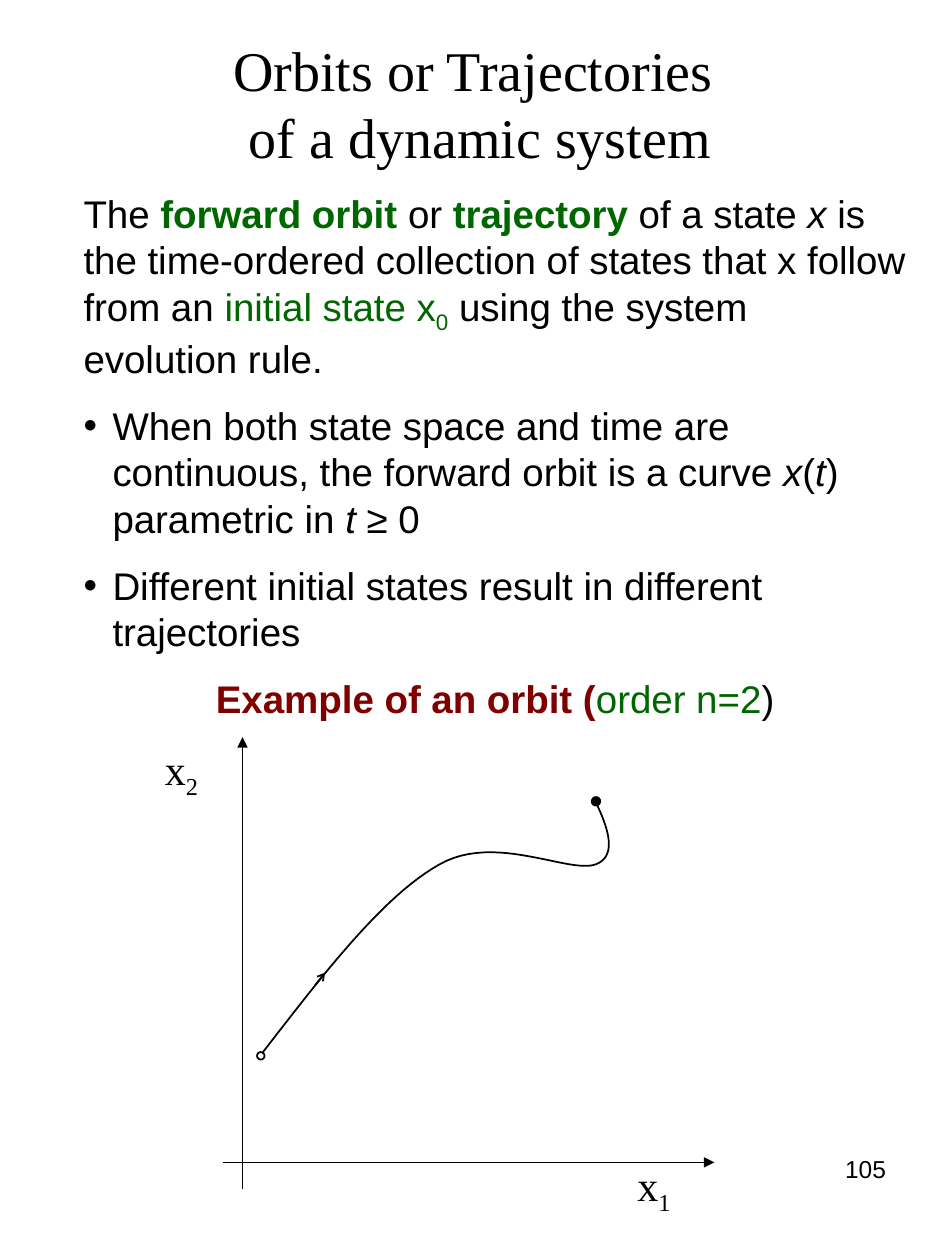
from lxml import etree
from pptx import Presentation
from pptx.dml.color import RGBColor
from pptx.enum.shapes import MSO_CONNECTOR, MSO_SHAPE
from pptx.enum.text import MSO_ANCHOR, PP_ALIGN
from pptx.oxml.ns import qn
from pptx.util import Inches, Pt

STRAIGHT, ELLIPSE = MSO_CONNECTOR.STRAIGHT, MSO_SHAPE.OVAL
LEFT, CENTER, RIGHT, JUSTIFY = (PP_ALIGN.LEFT, PP_ALIGN.CENTER,
                                PP_ALIGN.RIGHT, PP_ALIGN.JUSTIFY)
TOP, MIDDLE = MSO_ANCHOR.TOP, MSO_ANCHOR.MIDDLE
COLORS = {"ink": "000000", "term": "006600", "example": "800000"}
SANS, SERIF = "Arial", "Times New Roman"

prs = Presentation()
prs.slide_width, prs.slide_height = Inches(7.5), Inches(10)
COL, ROW = prs.slide_width / 75, prs.slide_height / 100
slide = prs.slides.add_slide(prs.slide_layouts[6])
shapes = slide.shapes


def add_text(cell, paragraphs, size, font=SANS, align=LEFT, anchor=TOP):
    """Cell is (column, row, columns, rows); a paragraph is (runs, extras),
    a run is (text, styles) with styles from a colour name, b, i, sub and
    br, which starts the run on a new line."""
    x, y, w, h = cell
    frame = shapes.add_textbox(int(x * COL), int(y * ROW),
                               int(w * COL), int(h * ROW)).text_frame
    frame.word_wrap = True
    frame.vertical_anchor = anchor
    for n, (runs, extras) in enumerate(paragraphs):
        para = frame.add_paragraph() if n else frame.paragraphs[0]
        para.alignment = extras.get("align", align)
        if n:
            para.space_before = Pt(6)
        para.space_after = Pt(6 if len(paragraphs) > 1 else 0)
        if extras.get("bullet"):
            props = para._p.get_or_add_pPr()
            props.set("marL", str(Inches(0.23)))
            props.set("indent", str(-Inches(0.23)))
            etree.SubElement(props, qn("a:buFont"), typeface=SANS)
            etree.SubElement(props, qn("a:buChar"), char="•")
        for text, styles in runs:
            if "br" in styles:
                para.add_line_break()
            run = para.add_run()
            run.text = text
            run.font.name, run.font.size = font, Pt(size)
            run.font.bold, run.font.italic = "b" in styles, "i" in styles
            color = next((s for s in styles if s in COLORS), "ink")
            run.font.color.rgb = RGBColor.from_string(COLORS[color])
            if "sub" in styles:
                run.font._element.set("baseline", "-25000")


def style_line(shape, width, end=None, end_size="med"):
    shape.line.color.rgb = RGBColor.from_string(COLORS["ink"])
    shape.line.width = Pt(width)
    props = shape._element.spPr
    if end:
        etree.SubElement(props.find(qn("a:ln")), qn("a:tailEnd"),
                         type=end, w=end_size, len=end_size)
    if props.find(qn("a:effectLst")) is None:
        etree.SubElement(props, qn("a:effectLst"))


title = [("Orbits or Trajectories", ()), (" of a dynamic system", ("br",))]
add_text((3.8, 2.7, 67.5, 10.9), [(title, {})], 32, SERIF, CENTER, MIDDLE)

definition = [
    ("The ", ()), ("forward orbit ", ("term", "b")), ("or ", ()),
    ("trajectory ", ("term", "b")), ("of a state ", ()), ("x", ("i",)),
    (" is the time-ordered collection of states that x follow from an ", ()),
    ("initial state x", ("term",)), ("0", ("term", "sub")),
    (" using the system evolution rule.", ()),
]
continuous_case = [
    ("When both state space and time are continuous, "
     "the forward orbit is a curve ", ()),
    ("x", ("i",)), ("(", ()), ("t", ("i",)), (") parametric in ", ()),
    ("t ", ("i",)), ("≥ 0", ()),
]
initial_states = [
    ("Different initial states result in different trajectories", ())]
example = [("Example of an orbit (", ("example", "b")),
           ("order n=2", ("term",)), (")", ())]
add_text((5.65, 14.6, 67.3, 43.1),
         [(definition, {}), (continuous_case, {"bullet": True}),
          (initial_states, {"bullet": True}), (example, {"align": CENTER})],
         22)

# Axes and the direction mark on the orbit
for x1, y1, x2, y2, width, end, end_size in [
        (19.25, 94.4, 19.25, 58.5, 0.75, "triangle", "med"),
        (17.7, 92.25, 56.7, 92.25, 0.75, "triangle", "med"),
        (25, 78.2, 25.8, 77.2, 1, "arrow", "sm")]:
    line = shapes.add_connector(STRAIGHT, int(x1 * COL), int(y1 * ROW),
                                int(x2 * COL), int(y2 * ROW))
    style_line(line, width, end, end_size)

for column, row, index in [(49.6, 91.5, "1"), (12.1, 58.5, "2")]:
    add_text((column, row, 7.2, 5.7),
             [([("x", ()), (index, ("sub",))], {})], 24, SERIF, JUSTIFY)

# Orbit: three cubic Bézier spans, sampled into short segments
orbit_start = (20.8, 83.6)
spans = [[(25.6, 77.4), (30.4, 71.1), (34.9, 68.6)],
         [(39.3, 66.1), (45.2, 69.4), (47.3, 68.6)],
         [(49.7, 67.7), (47.1, 63.6), (47.3, 63.6)]]
STEPS = 24
orbit_points, start = [], orbit_start
for control_1, control_2, finish in spans:
    for step in range(1, STEPS + 1):
        t = step / STEPS
        x, y = ((1 - t) ** 3 * a + 3 * (1 - t) ** 2 * t * b
                + 3 * (1 - t) * t ** 2 * c + t ** 3 * d
                for a, b, c, d in zip(start, control_1, control_2, finish))
        orbit_points.append((int(x * COL), int(y * ROW)))
    start = finish
builder = shapes.build_freeform(int(orbit_start[0] * COL),
                                int(orbit_start[1] * ROW))
builder.add_line_segments(orbit_points, close=False)
orbit = builder.convert_to_shape()
orbit.shadow.inherit = False
orbit.fill.background()
style_line(orbit, 1, "oval")

initial_state = shapes.add_shape(ELLIPSE, int(20.4 * COL), int(83.5 * ROW),
                                 int(0.6 * COL), int(0.6 * ROW))
initial_state.shadow.inherit = False
initial_state.fill.background()
style_line(initial_state, 1)

add_text((53.8, 91.1, 17.5, 6.9), [([("105", ())], {})], 14, align=RIGHT)

prs.save("out.pptx")
